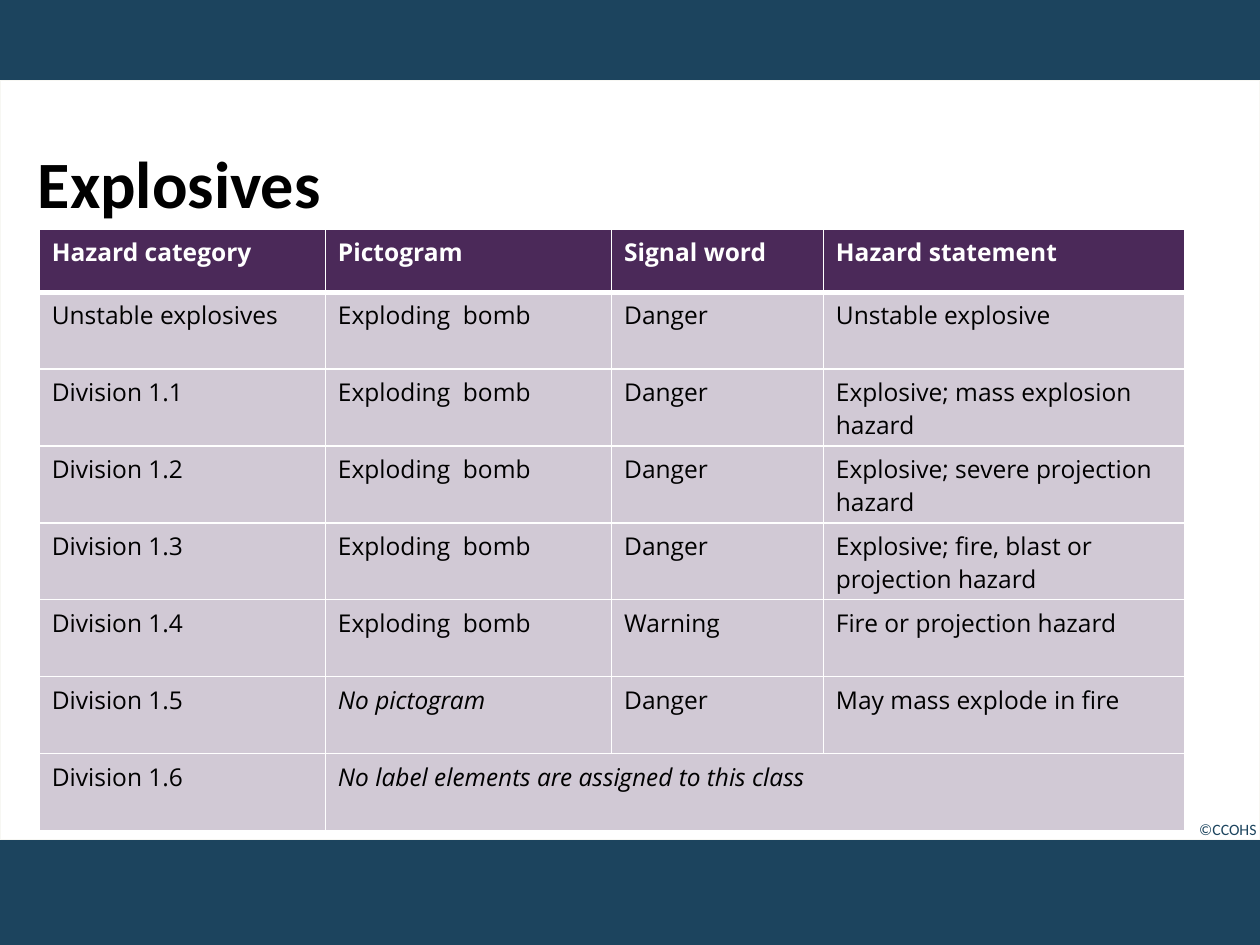
from lxml import etree
from pptx import Presentation
from pptx.dml.color import RGBColor
from pptx.enum import shapes, text
from pptx.oxml.ns import qn
from pptx.util import Cm, Pt

NAVY, PLUM, WHITE, BLACK = "1C445E", "4B2959", "FFFFFF", "000000"
BOMB = "Exploding  bomb"
ROWS = [
    ("Hazard category", "Pictogram", "Signal word", "Hazard statement"),
    ("Unstable explosives", BOMB, "Danger", "Unstable explosive"),
    ("Division 1.1", BOMB, "Danger", "Explosive; mass explosion hazard"),
    ("Division 1.2", BOMB, "Danger", "Explosive; severe projection hazard"),
    ("Division 1.3", BOMB, "Danger", "Explosive; fire, blast or projection hazard"),
    ("Division 1.4", BOMB, "Warning", "Fire or projection hazard"),
    ("Division 1.5", "No pictogram", "Danger", "May mass explode in fire"),
    ("Division 1.6", "No label elements are assigned to this class", "", ""),
]
WIDTHS = [5.77, 5.77, 4.27, 7.29]


def rgb(code):
    return RGBColor.from_string(code)


def style(para, face, size, tint, bold=False, slant=False):
    font = para.font
    font.name, font.size, font.color.rgb = face, Pt(size), rgb(tint)
    font.bold, font.italic = bold, slant


deck = Presentation()
deck.slide_width, deck.slide_height = Cm(25.4), Cm(19.05)
slide = deck.slides.add_slide(deck.slide_layouts[5])
slide.background.fill.solid()
slide.background.fill.fore_color.rgb = rgb(NAVY)

# Title, with the white panel behind it
title = slide.shapes.title
title.left, title.top, title.width, title.height = Cm(0.51), Cm(2.72), Cm(20.45), Cm(1.9)
frame = title.text_frame
frame.text = "Explosives"
frame.auto_size = text.MSO_AUTO_SIZE.NONE
frame.vertical_anchor = text.MSO_ANCHOR.MIDDLE
frame.paragraphs[0].alignment = text.PP_ALIGN.LEFT
style(frame.paragraphs[0], "Calibri", 37.8, BLACK, bold=True)

panel = slide.shapes.add_shape(
    shapes.MSO_SHAPE.RECTANGLE, 0, Cm(1.63), deck.slide_width, Cm(15.29))
panel.shadow.inherit = False
panel.fill.solid()
panel.fill.fore_color.rgb = rgb(WHITE)
panel.line.color.rgb = rgb("F7F7F3")
panel.line.width = Pt(0.75)
title.element.addprevious(panel.element)

# Copyright line
note = slide.shapes.add_textbox(Cm(23.47), Cm(16.41), Cm(2.11), Cm(0.64))
note.text_frame.word_wrap = True
note.text_frame.text = "©CCOHS"
para = note.text_frame.paragraphs[0]
para.alignment = text.PP_ALIGN.RIGHT
style(para, "Calibri", 9, NAVY)

# Hazard table
table = slide.shapes.add_table(
    len(ROWS), len(WIDTHS), Cm(0.79), Cm(4.62), Cm(sum(WIDTHS)), Cm(12.12)).table
for col, width in zip(table.columns, WIDTHS):
    col.width = Cm(width)

for r, row in enumerate(ROWS):
    head = r == 0
    table.rows[r].height = Cm(1.27 if head else 1.55)
    for c, words in enumerate(row):
        cell = table.cell(r, c)
        cell.text = words
        style(cell.text_frame.paragraphs[0], "Open Sans", 14,
              WHITE if head else BLACK, bold=head, slant=words.startswith("No "))
        props = cell._tc.get_or_add_tcPr()
        for side in "LRTB":
            thick = (r, side) in [(0, "B"), (1, "T")]
            edge = etree.SubElement(props, qn("a:ln" + side), w=str(Pt(3 if thick else 1)))
            paint = etree.SubElement(edge, qn("a:solidFill"))
            etree.SubElement(paint, qn("a:srgbClr"), val=WHITE)
        cell.fill.solid()
        cell.fill.fore_color.rgb = rgb(PLUM)
        if not head:
            tint = props.find(qn("a:solidFill") + "/" + qn("a:srgbClr"))
            etree.SubElement(tint, qn("a:alpha"), val="25000")

last = len(ROWS) - 1
table.cell(last, 1).merge(table.cell(last, 3))

deck.save("out.pptx")
